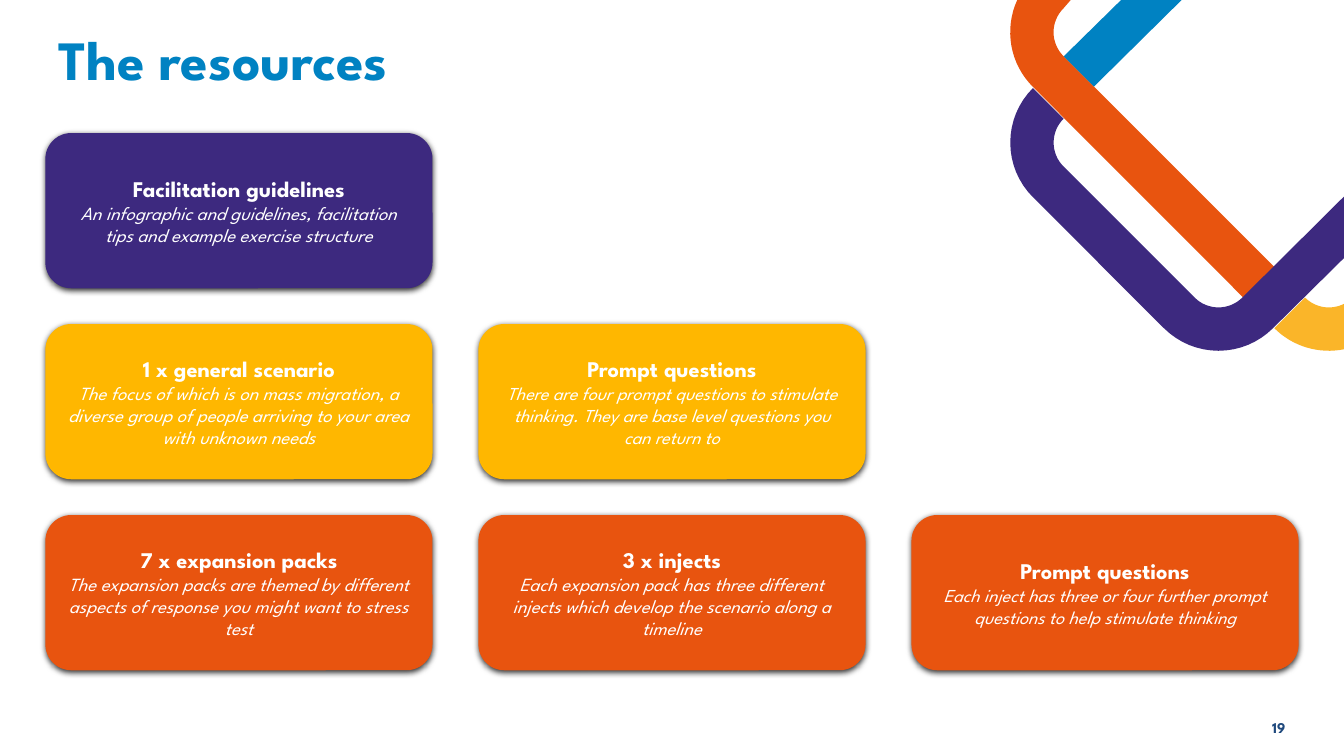
"""Build the slide that lists the exercise resources as a grid of cards."""
import math
from typing import NamedTuple

import lxml.etree
import pptx
import pptx.dml.color
import pptx.enum.shapes
import pptx.enum.text
import pptx.oxml.ns
import pptx.shapes.autoshape
import pptx.slide
import pptx.text.text
import pptx.util

COLORS = {
    "blue": "0082C2",
    "navy": "1F497D",
    "purple": "3D297F",
    "yellow": "FFB700",
    "amber": "FAB529",
    "orange": "E8540F",
    "white": "FFFFFF",
    "black": "000000",
}
FONT = "League Spartan"
SLIDE_WIDTH, SLIDE_HEIGHT = 13.33, 7.5
MARGIN = 0.45
GRID_TOP = 1.32
COLUMN_STEP, ROW_STEP = 4.295, 1.895
CARD_WIDTH, CARD_HEIGHT = 3.84, 1.54
INSET = 0.13
OUTER_RADIUS, INNER_RADIUS = 0.765, 0.335

Point = tuple[float, float]


class Card(NamedTuple):
    column: int
    row: int
    color: str
    heading: str
    detail: str
    detail_size: float = 13.3


class Band(NamedTuple):
    color: str
    outline: list[Point]


CARDS = [
    Card(0, 0, "purple", "Facilitation guidelines",
         "An infographic and guidelines, facilitation tips and example exercise structure"),
    Card(0, 1, "yellow", "1 x general scenario",
         "The focus of which is on mass migration, a diverse group of people "
         "arriving to your area with unknown needs"),
    Card(1, 1, "yellow", "Prompt questions",
         "There are four prompt questions to stimulate thinking. "
         "They are base level questions you can return to", 13),
    Card(0, 2, "orange", "7 x expansion packs",
         "The expansion packs are themed by different aspects of response "
         "you might want to stress test"),
    Card(1, 2, "orange", "3 x injects",
         "Each expansion pack has three different injects which develop "
         "the scenario along a timeline"),
    Card(2, 2, "orange", "Prompt questions",
         "Each inject has three or four further prompt questions to help stimulate thinking", 13),
]


def arc(center: Point, radius: float, start: float, end: float) -> list[Point]:
    """Return points along an arc, with angles in degrees clockwise from the right."""
    steps = 16
    angles = [math.radians(start + (end - start) * step / steps) for step in range(steps + 1)]
    return [(center[0] + radius * math.cos(angle), center[1] + radius * math.sin(angle))
            for angle in angles]


def corner_bands() -> list[Band]:
    """Return the interlaced bands of the top right corner, from back to front."""
    orange_corner, purple_corner = (10.785, 0.32), (10.785, 1.415)
    purple_base, amber_base = (12.085, 2.715), (13.18, 2.715)
    top_cut = 180 + math.degrees(math.asin(orange_corner[1] / OUTER_RADIUS))
    outer_cut, inner_cut = (
        math.degrees(math.acos((SLIDE_WIDTH - amber_base[0]) / radius))
        for radius in (OUTER_RADIUS, INNER_RADIUS))
    return [
        Band("orange", arc(orange_corner, OUTER_RADIUS, top_cut, 135)
             + [(12.33, 2.95), (12.64, 2.65)]
             + arc(orange_corner, INNER_RADIUS, 135, 225) + [(10.62, 0)]),
        Band("amber", arc(amber_base, OUTER_RADIUS, 135, outer_cut)
             + arc(amber_base, INNER_RADIUS, inner_cut, 135)),
        Band("purple", arc(purple_corner, OUTER_RADIUS, 225, 135)
             + arc(purple_base, OUTER_RADIUS, 135, 45)
             + [(SLIDE_WIDTH, 2.56), (SLIDE_WIDTH, 1.95)]
             + arc(purple_base, INNER_RADIUS, 45, 135)
             + arc(purple_corner, INNER_RADIUS, 135, 225)),
        Band("blue", [(11.72, 0), (11.12, 0), (10.55, 0.56), (10.85, 0.86)]),
    ]


def rgb(color: str) -> pptx.dml.color.RGBColor:
    """Return a named colour."""
    return pptx.dml.color.RGBColor.from_string(COLORS[color])


def format_frame(text_frame: pptx.text.text.TextFrame) -> None:
    """Wrap a text frame, centre it vertically and set its insets."""
    text_frame.word_wrap = True
    text_frame.auto_size = pptx.enum.text.MSO_AUTO_SIZE.NONE
    text_frame.vertical_anchor = pptx.enum.text.MSO_ANCHOR.MIDDLE
    for side in ("left", "top", "right", "bottom"):
        setattr(text_frame, f"margin_{side}", pptx.util.Inches(INSET))


def format_paragraph(paragraph: pptx.text.text._Paragraph, size: float, color: str,
                     alignment: pptx.enum.text.PP_ALIGN, italic: bool = False) -> None:
    """Format the runs of a paragraph as bold, or as italic."""
    paragraph.alignment = alignment
    for run in paragraph.runs:
        run.font.name = FONT
        run.font.size = pptx.util.Pt(size)
        run.font.bold = not italic
        run.font.italic = italic
        run.font.color.rgb = rgb(color)


def paint(shape: pptx.shapes.autoshape.Shape, color: str) -> None:
    """Fill a shape and remove its line and theme shadow."""
    shape.shadow.inherit = False
    shape.fill.solid()
    shape.fill.fore_color.rgb = rgb(color)
    shape.line.fill.background()


def add_shadow(shape: pptx.shapes.autoshape.Shape) -> None:
    """Give a shape a soft shadow below."""
    qn = pptx.oxml.ns.qn
    effects = shape.element.spPr.find(qn("a:effectLst"))
    shadow = lxml.etree.SubElement(
        effects, qn("a:outerShdw"), blurRad=str(pptx.util.Pt(4.5)),
        dist=str(pptx.util.Pt(1.5)), dir="5400000", algn="ctr", rotWithShape="0")
    shade = lxml.etree.SubElement(shadow, qn("a:srgbClr"), val=COLORS["black"])
    lxml.etree.SubElement(shade, qn("a:alpha"), val="80000")


def add_card(slide: pptx.slide.Slide, card: Card) -> None:
    """Draw a card in its grid cell."""
    shape = slide.shapes.add_shape(
        pptx.enum.shapes.MSO_SHAPE.ROUNDED_RECTANGLE,
        pptx.util.Inches(MARGIN + card.column * COLUMN_STEP),
        pptx.util.Inches(GRID_TOP + card.row * ROW_STEP),
        pptx.util.Inches(CARD_WIDTH), pptx.util.Inches(CARD_HEIGHT))
    paint(shape, card.color)
    add_shadow(shape)
    format_frame(shape.text_frame)
    shape.text_frame.text = f"{card.heading}\n{card.detail}"
    heading, detail = shape.text_frame.paragraphs
    center = pptx.enum.text.PP_ALIGN.CENTER
    format_paragraph(heading, 16, "white", center)
    format_paragraph(detail, card.detail_size, "white", center, italic=True)


def add_band(slide: pptx.slide.Slide, band: Band) -> None:
    """Draw a band of the corner decoration."""
    points = [(pptx.util.Inches(x), pptx.util.Inches(y)) for x, y in band.outline]
    builder = slide.shapes.build_freeform(*points[0])
    builder.add_line_segments(points[1:], close=True)
    paint(builder.convert_to_shape(), band.color)


def main() -> None:
    """Build and save the slide."""
    presentation = pptx.Presentation()
    presentation.slide_width = pptx.util.Inches(SLIDE_WIDTH)
    presentation.slide_height = pptx.util.Inches(SLIDE_HEIGHT)
    slide = presentation.slides.add_slide(presentation.slide_layouts[5])

    title = slide.shapes.title
    title.left, title.top = pptx.util.Inches(MARGIN), pptx.util.Inches(0.13)
    title.width, title.height = pptx.util.Inches(12.42), pptx.util.Inches(0.9)
    title.text_frame.text = "The resources"
    format_frame(title.text_frame)
    format_paragraph(title.text_frame.paragraphs[0], 39.6, "blue", pptx.enum.text.PP_ALIGN.LEFT)

    number = slide.shapes.add_textbox(
        pptx.util.Inches(12.08), pptx.util.Inches(6.93),
        pptx.util.Inches(0.8), pptx.util.Inches(0.57))
    number.text_frame.text = "19"
    format_frame(number.text_frame)
    format_paragraph(number.text_frame.paragraphs[0], 10.7, "navy", pptx.enum.text.PP_ALIGN.RIGHT)

    for card in CARDS:
        add_card(slide, card)
    for band in corner_bands():
        add_band(slide, band)
    presentation.save("out.pptx")


if __name__ == "__main__":
    main()
